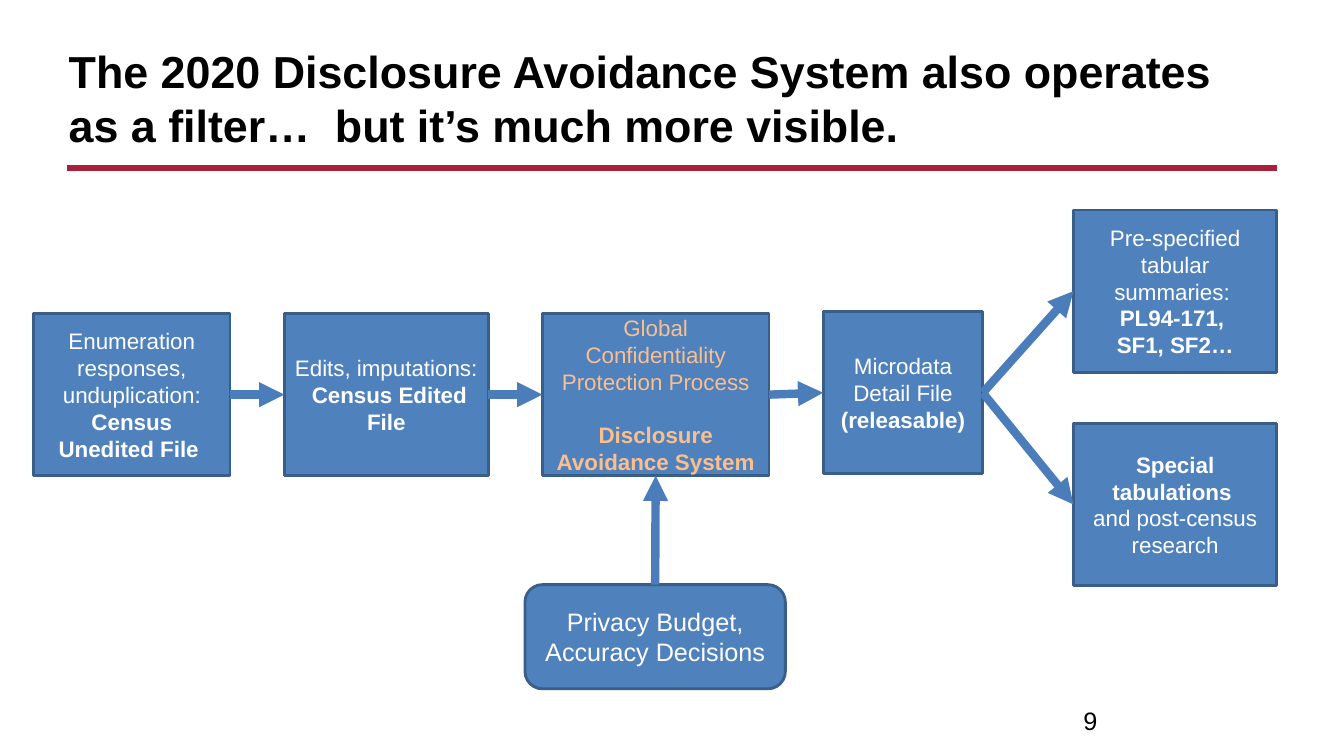
"""Build the Disclosure Avoidance System flow slide."""
from dataclasses import dataclass

from lxml import etree
from pptx import Presentation
from pptx import util as u
from pptx.dml.color import RGBColor
from pptx.enum import shapes, text
from pptx.oxml import ns

BLACK = RGBColor(0x00, 0x00, 0x00)
WHITE = RGBColor(0xFF, 0xFF, 0xFF)
PEACH = RGBColor(0xFA, 0xBF, 0x8E)
BOX_BLUE = RGBColor(0x4F, 0x81, 0xBD)
BORDER_BLUE = RGBColor(0x39, 0x5E, 0x89)
ARROW_BLUE = RGBColor(0x4A, 0x7D, 0xBA)
CRIMSON = RGBColor(0xA9, 0x20, 0x3D)

FONT = "Arial"
SLIDE_WIDTH, SLIDE_HEIGHT = u.Inches(13.33), u.Inches(7.5)
COLUMNS, ROWS = 160, 90
TOP, LEFT, BOTTOM, RIGHT = range(4)
STAGE_ROW, STAGE_ROWS = 37.32, 19.32
OUTPUT_COLUMN, OUTPUT_COLUMNS = 127.8, 24.2


@dataclass(frozen=True)
class Phrase:
    text: str
    bold: bool = False


@dataclass(frozen=True)
class Box:
    name: str
    column: float
    row: float
    columns: float
    rows: float
    paragraphs: tuple[tuple[Phrase, ...], ...]
    size: int = 16
    color: RGBColor = WHITE
    gap: int = 0
    preset: shapes.MSO_SHAPE = shapes.MSO_SHAPE.RECTANGLE


@dataclass(frozen=True)
class Arrow:
    start: str
    start_side: int
    end: str
    end_side: int


BOXES = (
    Box("unedited", 4, STAGE_ROW, 23.4, STAGE_ROWS,
        ((Phrase("Enumeration responses, unduplication: "),
          Phrase("Census Unedited File ", True)),)),
    Box("edited", 33.84, STAGE_ROW, 24.3, STAGE_ROWS,
        ((Phrase("Edits, imputations:  "), Phrase("Census Edited File", True)),)),
    Box("avoidance", 64.56, STAGE_ROW, 27, STAGE_ROWS,
        ((Phrase("Global Confidentiality Protection Process"),),
         (Phrase("Disclosure Avoidance System", True),)),
        color=PEACH, gap=19),
    Box("microdata", 98, 37.1, 19, STAGE_ROWS,
        ((Phrase("Microdata Detail File"),), (Phrase("(releasable)", True),))),
    Box("summaries", OUTPUT_COLUMN, 25, OUTPUT_COLUMNS, STAGE_ROWS,
        ((Phrase("Pre-specified tabular summaries: "),),
         (Phrase("PL94-171, \vSF1, SF2…", True),))),
    Box("tabulations", OUTPUT_COLUMN, 50.4, OUTPUT_COLUMNS, STAGE_ROWS,
        ((Phrase("Special tabulations \v", True),
          Phrase("and post-census research")),)),
    Box("budget", 62.5, 69.6, 31, 12.4,
        ((Phrase("Privacy Budget,"),), (Phrase("Accuracy Decisions"),)),
        size=18, preset=shapes.MSO_SHAPE.ROUNDED_RECTANGLE),
)

ARROWS = (
    Arrow("unedited", RIGHT, "edited", LEFT),
    Arrow("edited", RIGHT, "avoidance", LEFT),
    Arrow("avoidance", RIGHT, "microdata", LEFT),
    Arrow("microdata", RIGHT, "summaries", LEFT),
    Arrow("microdata", RIGHT, "tabulations", LEFT),
    Arrow("budget", TOP, "avoidance", BOTTOM),
)


def across(columns: float) -> int:
    """Convert grid columns to a length."""
    return round(SLIDE_WIDTH * columns / COLUMNS)


def down(rows: float) -> int:
    """Convert grid rows to a length."""
    return round(SLIDE_HEIGHT * rows / ROWS)


def format_run(run, size: int, color: RGBColor, bold: bool) -> None:
    """Apply the slide's font to one run."""
    run.font.name = FONT
    run.font.size = u.Pt(size)
    run.font.bold = bold
    run.font.color.rgb = color


def draw_label(slide, wording: str, column: float, row: float, columns: float,
               rows: float, size: int, bold: bool, anchor) -> None:
    """Draw a black text box of one paragraph."""
    label = slide.shapes.add_textbox(across(column), down(row), across(columns), down(rows))
    frame = label.text_frame
    frame.word_wrap = True
    frame.vertical_anchor = anchor
    frame.text = wording
    format_run(frame.paragraphs[0].runs[0], size, BLACK, bold)


def draw_box(slide, box: Box):
    """Draw one process box with its centred wording."""
    shape = slide.shapes.add_shape(box.preset, across(box.column), down(box.row),
                                   across(box.columns), down(box.rows))
    shape.shadow.inherit = False
    shape.fill.solid()
    shape.fill.fore_color.rgb = BOX_BLUE
    shape.line.color.rgb = BORDER_BLUE
    shape.line.width = u.Pt(2)
    frame = shape.text_frame
    frame.word_wrap = True
    frame.vertical_anchor = text.MSO_ANCHOR.MIDDLE
    for index, phrases in enumerate(box.paragraphs):
        paragraph = frame.add_paragraph() if index else frame.paragraphs[0]
        paragraph.alignment = text.PP_ALIGN.CENTER
        if index and box.gap:
            paragraph.space_before = u.Pt(box.gap)
        for phrase in phrases:
            known = len(paragraph.runs)
            if known:
                paragraph.add_run().text = phrase.text
            else:
                paragraph.text = phrase.text
            for run in paragraph.runs[known:]:
                format_run(run, box.size, box.color, phrase.bold)
    return shape


def draw_line(slide, start: tuple[int, int], end: tuple[int, int],
              color: RGBColor, width: float):
    """Draw a straight connector without a shadow."""
    line = slide.shapes.add_connector(shapes.MSO_CONNECTOR.STRAIGHT, *start, *end)
    line.line.color.rgb = color
    line.line.width = u.Pt(width)
    etree.SubElement(line.element.spPr, ns.qn("a:effectLst"))
    return line


def draw_arrow(slide, arrow: Arrow, drawn: dict) -> None:
    """Join two boxes with an arrow."""
    line = draw_line(slide, (0, 0), (0, 0), ARROW_BLUE, 6)
    line.begin_connect(drawn[arrow.start], arrow.start_side)
    line.end_connect(drawn[arrow.end], arrow.end_side)
    etree.SubElement(line.line._get_or_add_ln(), ns.qn("a:tailEnd"), type="triangle")


def main() -> None:
    """Create and save the slide."""
    presentation = Presentation()
    presentation.slide_width, presentation.slide_height = SLIDE_WIDTH, SLIDE_HEIGHT
    slide = presentation.slides.add_slide(presentation.slide_layouts[6])
    draw_line(slide, (across(8), down(20)), (across(152), down(20)), CRIMSON, 4.5)
    draw_label(slide, "The 2020 Disclosure Avoidance System also operates "
               "as a filter…  but it’s much more visible.",
               7, 3.6, 145, 15, 32, True, text.MSO_ANCHOR.BOTTOM)
    drawn = {box.name: draw_box(slide, box) for box in BOXES}
    for arrow in ARROWS:
        draw_arrow(slide, arrow, drawn)
    draw_label(slide, "9", 127.8, 83.4, 24.2, 4.8, 18, False, text.MSO_ANCHOR.TOP)
    presentation.save("out.pptx")


if __name__ == "__main__":
    main()
